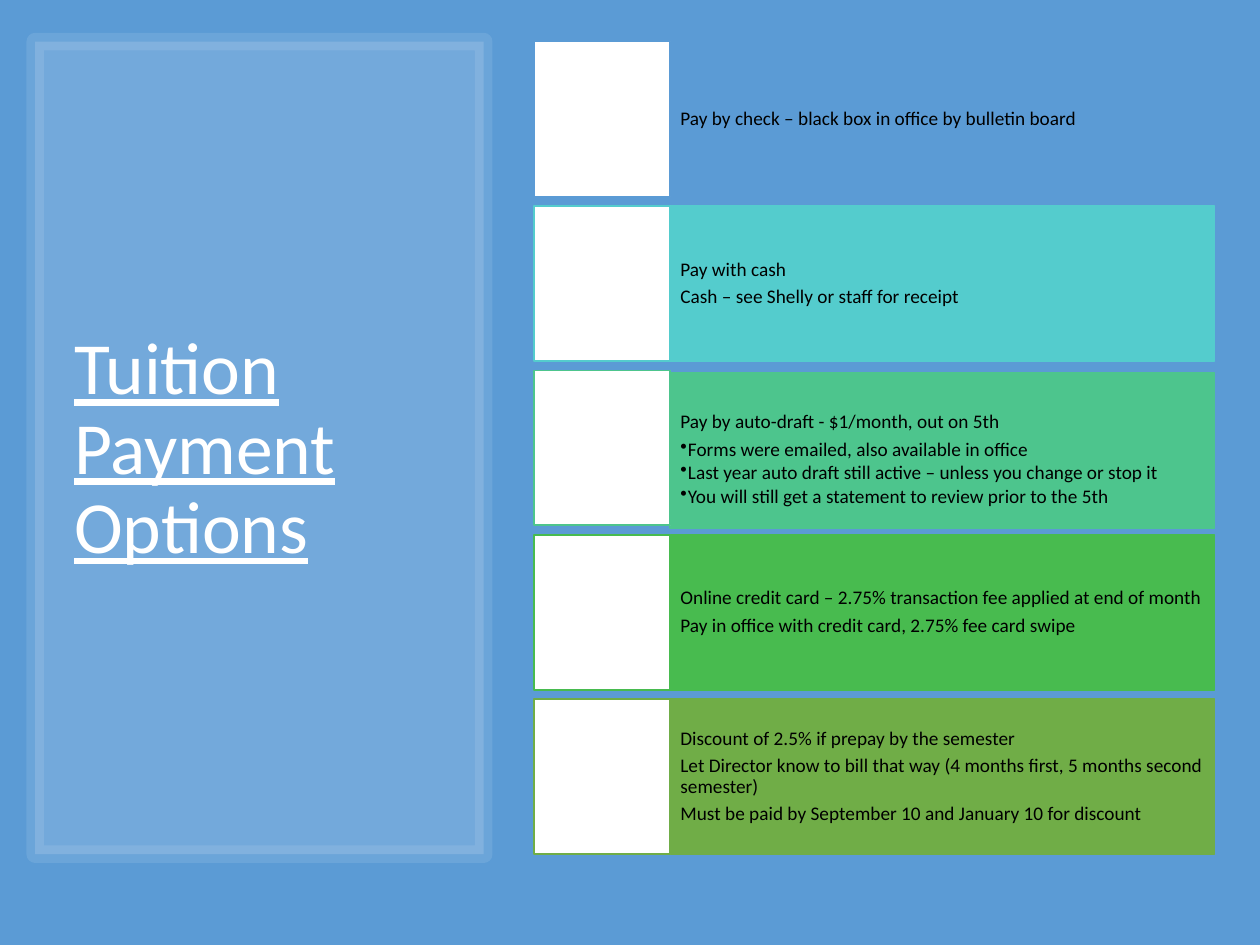
from lxml import etree
from pptx import Presentation
from pptx.dml.color import RGBColor
from pptx.enum import shapes, text
from pptx.oxml.ns import qn
from pptx.util import Inches, Pt

TITLE = "Tuition Payment Options"
FONT = "Calibri"
BLUE, WHITE, BLACK = "5B9BD5", "FFFFFF", "000000"

# Each option: colour, main lines, bulleted lines
OPTIONS = [
    (BLUE, ["Pay by check – black box in office by bulletin board"], []),
    ("54CCCD", ["Pay with cash", "Cash – see Shelly or staff for receipt"], []),
    ("4DC58D", ["Pay by auto-draft - $1/month, out on 5th"],
     ["Forms were emailed, also available in office",
      "Last year auto draft still active – unless you change or stop it",
      "You will still get a statement to review prior to the 5th"]),
    ("48BB4F", ["Online credit card – 2.75% transaction fee applied at end of month",
                "Pay in office with credit card, 2.75% fee card swipe"], []),
    ("70AD47", ["Discount of 2.5% if prepay by the semester",
                "Let Director know to bill that way (4 months first, 5 months second semester)",
                "Must be paid by September 10 and January 10 for discount"], []),
]

# Layout in inches
TOP, BOTTOM = 0.33, 6.78
ROW_HEIGHT = 1.23
PITCH = (BOTTOM - TOP - ROW_HEIGHT) / (len(OPTIONS) - 1)
TILE_LEFT, TILE_WIDTH = 4.24, 1.08
BAND_LEFT, BAND_WIDTH = TILE_LEFT + TILE_WIDTH, 4.32
BULLETED_DROP = 0.02
TEXT_SIZE = 11


def rgb(value):
    return RGBColor.from_string(value)


def add_rect(left, top, width, height, fill, line, line_width):
    rect = slide.shapes.add_shape(
        shapes.MSO_SHAPE.RECTANGLE, *map(Inches, (left, top, width, height)))
    rect.shadow.inherit = False
    rect.fill.solid()
    rect.fill.fore_color.rgb = rgb(fill)
    rect.line.color.rgb = rgb(line)
    rect.line.width = Pt(line_width)
    return rect


def set_alpha(properties, percent):
    color = properties.find(f"{qn('a:solidFill')}/{qn('a:srgbClr')}")
    etree.SubElement(color, qn("a:alpha"), val=str(percent * 1000))


def style(paragraph, size, color):
    paragraph.alignment = text.PP_ALIGN.LEFT
    paragraph.line_spacing = 0.9
    paragraph.font.name = FONT
    paragraph.font.size = Pt(size)
    paragraph.font.color.rgb = rgb(color)


def add_bullet(paragraph):
    paragraph.level = 1
    properties = paragraph._p.get_or_add_pPr()
    properties.set("marL", str(Inches(0.06)))
    properties.set("indent", str(-Inches(0.06)))
    bullet = etree.Element(qn("a:buChar"), char="•")
    properties.find(qn("a:defRPr")).addprevious(bullet)


def fill_band(band, lines, bullets):
    frame = band.text_frame
    frame.word_wrap = True
    frame.margin_left = frame.margin_right = Inches(0.08)
    frame.margin_top = frame.margin_bottom = Inches(0.31)
    frame.vertical_anchor = text.MSO_ANCHOR.TOP if bullets else text.MSO_ANCHOR.MIDDLE
    for i, line in enumerate(lines + bullets):
        paragraph = frame.add_paragraph() if i else frame.paragraphs[0]
        paragraph.text = line
        style(paragraph, TEXT_SIZE, BLACK)
        bulleted = i >= len(lines)
        paragraph.space_after = Pt(TEXT_SIZE * (0.15 if bulleted else 0.35))
        if bulleted:
            add_bullet(paragraph)


prs = Presentation()
prs.slide_width, prs.slide_height = Inches(10), Inches(7.5)
slide = prs.slides.add_slide(prs.slide_layouts[6])
slide.background.fill.solid()
slide.background.fill.fore_color.rgb = rgb(BLUE)

# Translucent title panel
panel = add_rect(0.28, TOP, 3.56, BOTTOM - TOP, WHITE, WHITE, 10)
set_alpha(panel._element.spPr, 15)
set_alpha(panel._element.spPr.find(qn("a:ln")), 10)

# Title
title = slide.shapes.add_textbox(*map(Inches, (0.49, 0.7, 3.12, 5.75))).text_frame
title.word_wrap = True
title.vertical_anchor = text.MSO_ANCHOR.MIDDLE
title.text = TITLE
style(title.paragraphs[0], 42, WHITE)
title.paragraphs[0].font.underline = True

# Payment options: coloured band with a white tile on its left
for row, (color, lines, bullets) in enumerate(OPTIONS):
    top = TOP + row * PITCH
    band_top = top + (BULLETED_DROP if bullets else 0)
    band = add_rect(BAND_LEFT, band_top, BAND_WIDTH, ROW_HEIGHT, color, color, 1)
    fill_band(band, lines, bullets)
    add_rect(TILE_LEFT, top, TILE_WIDTH, ROW_HEIGHT, WHITE, color, 1)

prs.save("out.pptx")
